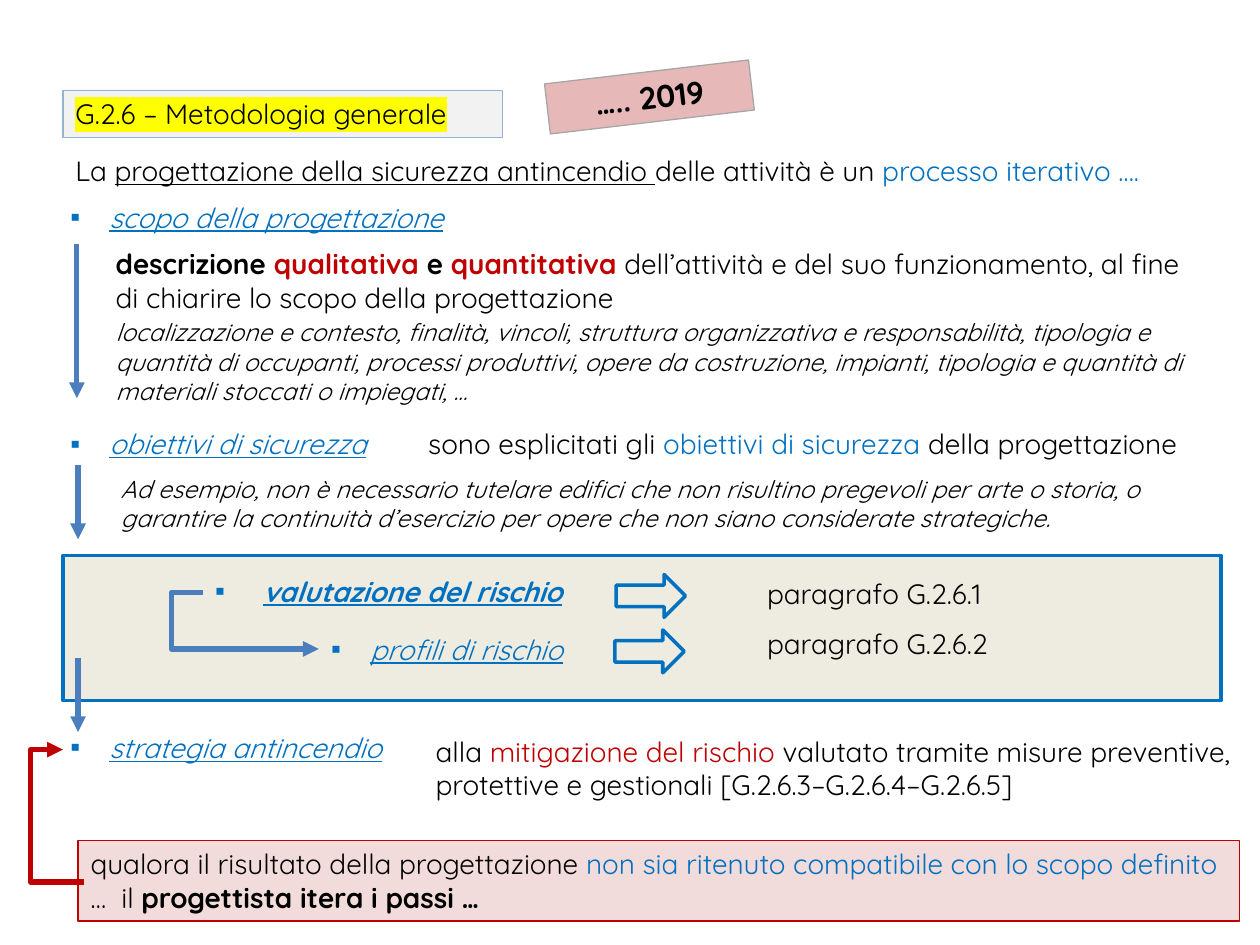
from pptx import Presentation
from pptx.dml.color import RGBColor
from pptx.enum.shapes import MSO_CONNECTOR, MSO_SHAPE
from pptx.enum.text import MSO_ANCHOR, MSO_AUTO_SIZE, PP_ALIGN
from pptx.oxml.ns import qn
from pptx.util import Emu, Pt
from lxml import etree

PX = 9144
FONT = "Quicksand"
COLORS = {
    "text": "000000", "blue": "0070C0", "red": "C00000", "flow": "4B7EBC",
    "panel": "EEECE1", "alert": "F2DCDB", "title": "F2F2F2",
    "title_line": "95B3D7", "tag": "E6B9B8", "tag_line": "A6A6A6",
    "highlight": "FFFF00",
}
RECT, RIGHT_ARROW = MSO_SHAPE.RECTANGLE, MSO_SHAPE.RIGHT_ARROW
STRAIGHT, ELBOW = MSO_CONNECTOR.STRAIGHT, MSO_CONNECTOR.ELBOW
LEFT, CENTER = PP_ALIGN.LEFT, PP_ALIGN.CENTER
BOLD = {"bold": True}
ITALIC = {"italic": True}
UNDERLINE = {"underline": True}
LINK = {**ITALIC, **UNDERLINE}


def px(*lengths):
    """Turn px lengths into EMU."""
    return [Emu(length * PX) for length in lengths]


def rgb(name):
    """Return a named colour."""
    return RGBColor.from_string(COLORS[name])


def add_bullet(paragraph, indent):
    """Give a paragraph a square bullet with a hanging indent."""
    properties = paragraph._p.get_or_add_pPr()
    properties.set("marL", str(indent * PX))
    properties.set("indent", str(-indent * PX))
    etree.SubElement(properties, qn("a:buFont"), typeface="Arial")
    etree.SubElement(properties, qn("a:buChar"), char="▪")


def write(shape, runs, size=16, align=LEFT, indent=0):
    """Write one paragraph of (text, colour, format) runs."""
    frame = shape.text_frame
    layout = {"word_wrap": True, "auto_size": MSO_AUTO_SIZE.SHAPE_TO_FIT_TEXT,
              "vertical_anchor": MSO_ANCHOR.TOP}
    for name, value in layout.items():
        setattr(frame, name, value)
    paragraph = frame.paragraphs[0]
    paragraph.alignment = align
    if indent:
        add_bullet(paragraph, indent)
    for text, color, styles in runs:
        run = paragraph.add_run()
        run.text = text
        run.font.color.rgb = rgb(color)
        for name, value in {"name": FONT, "size": Pt(size), **styles}.items():
            setattr(run.font, name, value)


def add_text(slide, box, runs, **options):
    """Add a text box."""
    write(slide.shapes.add_textbox(*px(*box)), runs, **options)


def add_block(slide, kind, box, fill, line, weight):
    """Add a filled and outlined preset shape."""
    block = slide.shapes.add_shape(kind, *px(*box))
    block.shadow.inherit = False
    block.fill.solid()
    block.fill.fore_color.rgb = rgb(fill)
    block.line.color.rgb = rgb(line)
    block.line.width = Pt(weight)
    return block


def add_flow(slide, start, end, color="flow", bend=None):
    """Add an arrow, bent at a share of its width if asked."""
    kind = STRAIGHT if bend is None else ELBOW
    flow = slide.shapes.add_connector(kind, *px(*start, *end))
    flow.line.color.rgb = rgb(color)
    flow.line.width = Pt(3)
    etree.SubElement(flow.line._get_or_add_ln(), qn("a:tailEnd"), type="triangle")
    properties = flow._element.spPr
    etree.SubElement(properties, qn("a:effectLst"))
    if bend is not None:
        guides = properties.find(qn("a:prstGeom")).get_or_add_avLst()
        etree.SubElement(guides, qn("a:gd"), name="adj1",
                         fmla=f"val {round(bend * 100000)}")


def add_header(slide, box):
    """Place the title, the year tag and the opening sentence."""
    left, top, width, _ = box
    title = add_block(slide, RECT, (left, top + 15, 349, 37), "title", "title_line", 0.75)
    write(title, [("G.2.6 – Metodologia generale", "text", {})])
    ink = title.text_frame.paragraphs[0].runs[0]._r.rPr.find(qn("a:solidFill"))
    highlight = etree.Element(qn("a:highlight"))
    etree.SubElement(highlight, qn("a:srgbClr"), val=COLORS["highlight"])
    ink.addnext(highlight)
    tag = add_block(slide, RECT, (left + 384, top, 163, 40), "tag", "tag_line", 0.75)
    tag.rotation = 353.3
    write(tag, [("….. 2019", "text", BOLD)], size=18, align=CENTER)
    add_text(slide, (left, top + 60, width, 37), [
        ("La ", "text", {}),
        ("progettazione della sicurezza antincendio ", "text", UNDERLINE),
        ("delle attività è un ", "text", {}),
        ("processo iterativo ….", "blue", {}),
    ])


def add_step(slide, box, name, details, arrow):
    """Place a bulleted step, its (box, size, runs) details and its arrow."""
    left, top, width, height = box
    add_text(slide, box, [(name, "blue", LINK)], indent=31)
    for (x, y, wide, high), size, runs in details:
        add_text(slide, (left + x, top + y, wide, high), runs, size=size)
    x, start, end = arrow
    add_flow(slide, (left + x, top + start), (left + x, top + end))


def add_risk_panel(slide, box):
    """Place the panel that links risk topics to their paragraphs."""
    left, top, _, _ = box
    add_block(slide, RECT, box, "panel", "blue", 2)
    topics = [
        ("valutazione del rischio", {**LINK, **BOLD}, 38, (111, 10, 302, 37),
         (439, 15), "paragrafo G.2.6.1", 12),
        ("profili di rischio", LINK, 31, (203, 56, 209, 37),
         (438, 59), "paragrafo G.2.6.2", 51),
    ]
    for topic, styles, indent, place, arrow, reference, drop in topics:
        x, y, wide, high = place
        add_text(slide, (left + x, top + y, wide, high),
                 [(topic, "blue", styles)], indent=indent)
        add_block(slide, RIGHT_ARROW, (left + arrow[0], top + arrow[1], 55, 34),
                  "panel", "blue", 2)
        add_text(slide, (left + 549, top + drop, 213, 37), [(reference, "text", {})])
    add_flow(slide, (left + 111, top + 29), (left + 203, top + 74), bend=-0.27)


def add_iteration(slide, box):
    """Place the iteration note and its arrow back to the strategy."""
    left, top, _, _ = box
    note = add_block(slide, RECT, box, "alert", "red", 0.75)
    write(note, [
        ("qualora il risultato della progettazione ", "text", {}),
        ("non sia ritenuto compatibile con lo scopo definito", "blue", {}),
        (" …  il ", "text", {}),
        ("progettista itera i passi …", "text", BOLD),
    ])
    add_flow(slide, (left + 5, top + 33), (left - 12, top - 72), "red", bend=2.5)


def main():
    """Build and save the slide."""
    deck = Presentation()
    deck.slide_width, deck.slide_height = px(1000, 750)
    slide = deck.slides.add_slide(deck.slide_layouts[6])
    add_header(slide, (50, 57, 942, 97))
    add_step(slide, (46, 154, 340, 37), "scopo della progettazione", [
        ((36, 37, 883, 64), 16, [
            ("descrizione ", "text", BOLD),
            ("qualitativa", "red", BOLD),
            (" e ", "text", BOLD),
            ("quantitativa ", "red", BOLD),
            ("dell’attività e del suo funzionamento, al fine di chiarire "
             "lo scopo della progettazione", "text", {}),
        ]),
        ((36, 93, 869, 81), 14, [
            ("localizzazione e contesto, finalità, vincoli, struttura organizzativa "
             "e responsabilità, tipologia e quantità di occupanti, processi produttivi, "
             "opere da costruzione, impianti, tipologia e quantità di materiali "
             "stoccati o impiegati, …", "text", ITALIC),
        ]),
    ], (15, 40, 162))
    add_step(slide, (46, 334, 267, 37), "obiettivi di sicurezza", [
        ((284, 0, 652, 37), 16, [
            ("sono esplicitati gli ", "text", {}),
            ("obiettivi di sicurezza ", "blue", {}),
            ("della progettazione", "text", {}),
        ]),
        ((40, 37, 883, 57), 14, [
            ("Ad esempio, non è necessario tutelare edifici che non risultino pregevoli "
             "per arte o storia, o garantire la continuità d’esercizio per opere che "
             "non siano considerate strategiche.", "text", ITALIC),
        ]),
    ], (16, 35, 94))
    add_risk_panel(slide, (50, 441, 919, 115))
    add_step(slide, (46, 575, 285, 37), "strategia antincendio", [
        ((290, 3, 654, 64), 16, [
            ("alla ", "text", {}),
            ("mitigazione del rischio ", "red", {}),
            ("valutato tramite misure preventive, protettive e gestionali "
             "[G.2.6.3–G.2.6.4–G.2.6.5]", "text", {}),
        ]),
    ], (16, -53, 6))
    add_iteration(slide, (62, 667, 922, 64))
    deck.save("out.pptx")


if __name__ == "__main__":
    main()
